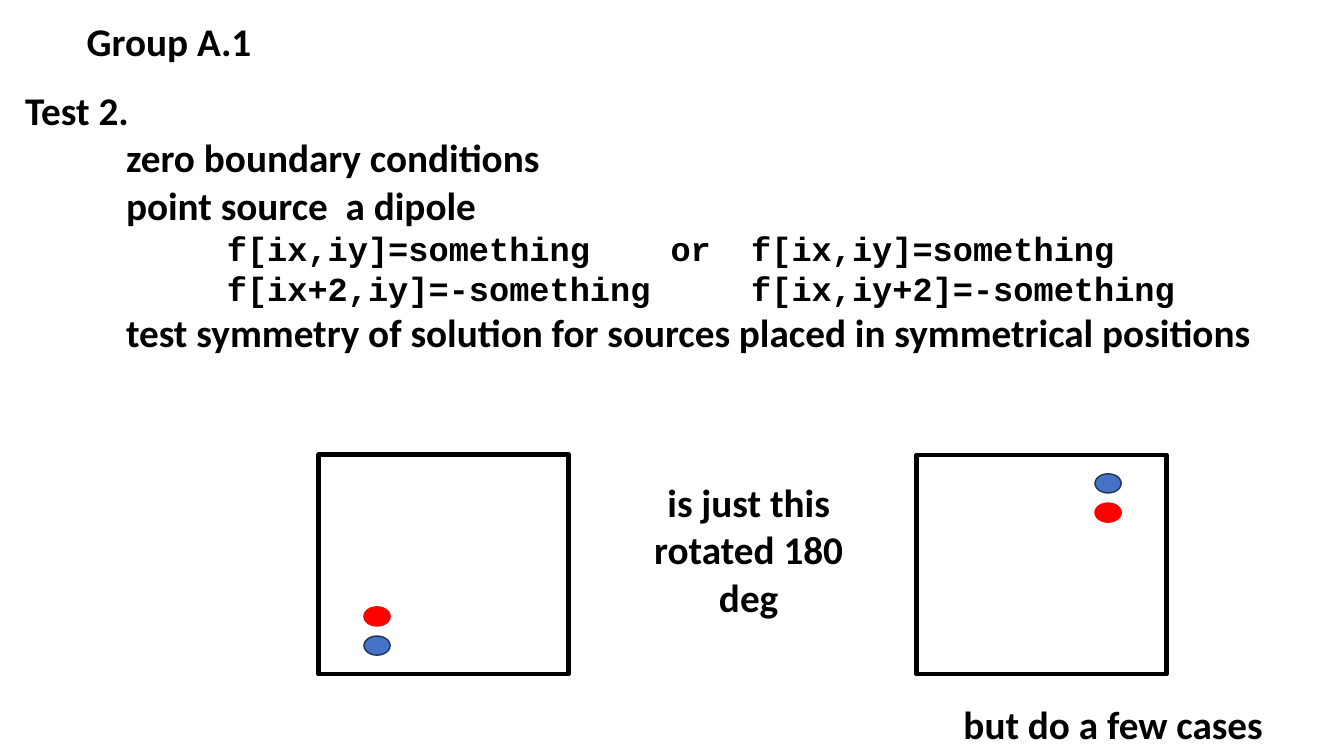
from pptx import Presentation
from pptx.dml.color import RGBColor
from pptx.enum.shapes import MSO_SHAPE as Shape
from pptx.enum.text import MSO_ANCHOR as Anchor, MSO_AUTO_SIZE as AutoSize, PP_ALIGN as Align
from pptx.oxml.ns import qn
from pptx.util import Inches, Pt
from lxml.etree import SubElement

BLACK = RGBColor(0x00, 0x00, 0x00)
RED = RGBColor(0xFF, 0x00, 0x00)
BLUE = RGBColor(0x44, 0x72, 0xC4)
NAVY = RGBColor(0x1E, 0x32, 0x56)


def write_lines(box, place, lines, align=Align.LEFT):
    """Place a text shape and fill it with (text, font, size) lines."""
    box.left, box.top, box.width, box.height = map(Inches, place)
    frame = box.text_frame
    frame.word_wrap = True
    frame.auto_size = AutoSize.NONE
    frame.vertical_anchor = Anchor.TOP
    for index, (text, font, size) in enumerate(lines):
        para = frame.add_paragraph() if index else frame.paragraphs[0]
        para.alignment = align
        para.space_before = Pt(0)
        span = para.add_run()
        span.text = text
        span.font.name = font
        span.font.size = Pt(size)
        span.font.bold = True
        span.font.color.rgb = BLACK


def add_outlined(group, kind, place, fill, line, weight):
    shape = group.shapes.add_shape(kind, *map(Inches, place))
    shape.shadow.inherit = False
    if fill is None:
        shape.fill.background()
    else:
        shape.fill.solid()
        shape.fill.fore_color.rgb = fill
    shape.line.color.rgb = line
    shape.line.width = Pt(weight)


deck = Presentation()
deck.slide_width, deck.slide_height = Inches(13.33), Inches(7.5)
slide = deck.slides.add_slide(deck.slide_layouts[1])

write_lines(slide.shapes.title, (0.76, 0.12, 11.81, 0.65), [("Group A.1", "Calibri", 28)])

# Test description: indents and code columns follow tabs of one inch
body = slide.placeholders[1]
write_lines(body, (0.15, 0.81, 13.18, 3.26), [
    ("Test 2.", "Calibri", 28),
    ("\tzero boundary conditions", "Calibri", 28),
    ("\tpoint source  a dipole", "Calibri", 28),
    ("\t\tf[ix,iy]=something\t  or\t f[ix,iy]=something", "Courier New", 24),
    ("\t\tf[ix+2,iy]=-something\t f[ix,iy+2]=-something", "Courier New", 24),
    ("\ttest symmetry of solution for sources placed in symmetrical positions", "Calibri", 28),
])
for para in body.text_frame.paragraphs:
    props = para._p.get_or_add_pPr()
    props.set("marL", "0")
    props.set("indent", "0")
    props.set("defTabSz", str(Inches(1)))
    SubElement(props, qn("a:buNone"))

# Captions
for text, place in (
    ("is just this rotated 180 deg", (6.33, 4.7, 2.19, 1.99)),
    ("but do a few cases", (9.19, 6.9, 3.7, 0.6)),
):
    caption = slide.shapes.add_textbox(0, 0, 0, 0)
    write_lines(caption, place, [(text, "Calibri", 28)], Align.CENTER)

# The same dipole in its domain, upright and then turned by 180 degrees
for left, angle in ((3.16, 0), (9.09, 180)):
    domain = slide.shapes.add_group_shape()
    add_outlined(domain, Shape.RECTANGLE, (left, 4.51, 2.48, 2.18), None, BLACK, 3)
    add_outlined(domain, Shape.OVAL, (left + 0.45, 6.31, 0.26, 0.19), BLUE, NAVY, 1)
    add_outlined(domain, Shape.OVAL, (left + 0.45, 6.02, 0.26, 0.19), RED, RED, 1)
    domain.rotation = angle

deck.save("out.pptx")
